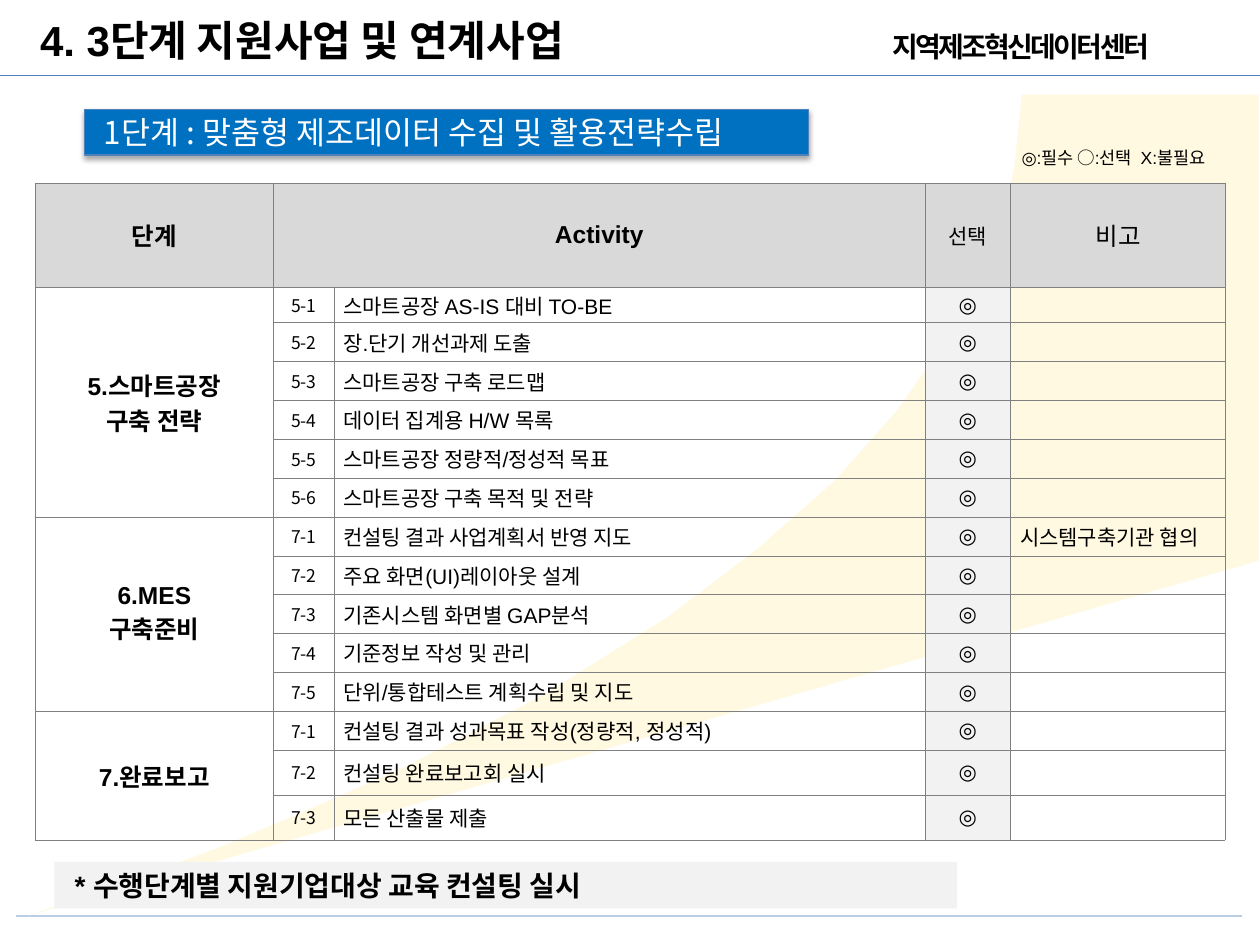
import pptx
import pptx.util
import pptx.dml.color
import pptx.enum.shapes
import pptx.enum.text
import pptx.oxml
import pptx.oxml.ns

Pt = pptx.util.Pt
RGB = pptx.dml.color.RGBColor
ALIGN = pptx.enum.text.PP_ALIGN
MIDDLE = pptx.enum.text.MSO_ANCHOR.MIDDLE

BLACK = RGB(0x00, 0x00, 0x00)
WHITE = RGB(0xFF, 0xFF, 0xFF)
CREAM = RGB(0xFF, 0xF9, 0xE1)
BLUE = RGB(0x00, 0x70, 0xC0)
BLUE_EDGE = RGB(0x4F, 0x81, 0xBD)
HEAD_RULE = RGB(0x4B, 0x7E, 0xBC)
FOOT_RULE = RGB(0xB9, 0xCD, 0xE5)
HEAD_FILL = RGB(0xD9, 0xD9, 0xD9)
PALE = RGB(0xF2, 0xF2, 0xF2)
GRID = RGB(0x80, 0x80, 0x80)
ARIAL, NOTO = "Arial", "Noto Sans CJK KR"

TITLE = "4. 3단계 지원사업 및 연계사업"
CENTER = "지역제조혁신데이터센터"
BANNER = "1단계 : 맞춤형 제조데이터 수집 및 활용전략수립"
FOOTNOTE = "* 수행단계별 지원기업대상 교육 컨설팅 실시"
LEGEND = [("◎:필수 ○:선택", 0), (" ", 2.8), ("X:불필요", 0)]

HEADERS = [(0, "단계", 14, True), (1, "Activity", 14, True),
           (3, "선택", 12, False), (4, "비고", 14, False)]
STAGES = [
    (["5.스마트공장", "구축 전략"], 5, [
        "스마트공장 AS-IS 대비 TO-BE", "장.단기 개선과제 도출",
        "스마트공장 구축 로드맵", "데이터 집계용 H/W 목록",
        "스마트공장 정량적/정성적 목표", "스마트공장 구축 목적 및 전략"]),
    (["6.MES", "구축준비"], 7, [
        "컨설팅 결과 사업계획서 반영 지도", "주요 화면(UI)레이아웃 설계",
        "기존시스템 화면별 GAP분석", "기준정보 작성 및 관리",
        "단위/통합테스트 계획수립 및 지도"]),
    (["7.완료보고"], 7, [
        "컨설팅 결과 성과목표 작성(정량적, 정성적)", "컨설팅 완료보고회 실시",
        "모든 산출물 제출"]),
]
REMARKS = {7: "시스템구축기관 협의"}
COLUMNS = [136, 35, 337.6, 48.4, 123]
ROWS = [60, 20] + [22.2] * 11 + [25.7] * 2

SWOOSH = [(584, 54), (719.3, 54), (719.3, 320.4), (15.8, 523.4), (75.6, 502.6),
          (124.6, 484.6), (180.7, 460.8), (234, 437), (312.5, 396), (382.3, 352.1),
          (433.4, 313.2), (477.4, 274.3), (512.6, 234.7), (537.8, 198.7),
          (555.8, 167.8), (571.7, 129.6), (579.6, 96.5)]


def element(parent, tag, **attrs):
    e = pptx.oxml.ns.qn(tag)
    child = parent.makeelement(e, {k: str(v) for k, v in attrs.items()})
    parent.append(child)
    return child


def add_run(p, text, size, font=ARIAL, bold=False, color=BLACK, spacing=0):
    r = p.add_run()
    r.text = text
    r.font.size = Pt(size)
    r.font.bold = bold
    r.font.color.rgb = color
    r.font.name = font
    rpr = r.font._element
    element(rpr, "a:ea", typeface=NOTO)
    if spacing:
        rpr.set("spc", str(round(spacing * 100)))


def prepare_frame(sp, inset=7.2, wrap=True):
    tf = sp.text_frame
    tf.word_wrap = wrap
    tf.vertical_anchor = MIDDLE
    tf.margin_left, tf.margin_right = Pt(inset), Pt(7.2)
    tf.margin_top = tf.margin_bottom = 0
    p = tf.paragraphs[0]
    p.alignment = ALIGN.LEFT
    return p


def add_box(s, box, inset=7.2, wrap=True):
    return prepare_frame(s.shapes.add_textbox(*map(Pt, box)), inset, wrap)


def add_bar(s, box, fill, inset):
    sp = s.shapes.add_shape(pptx.enum.shapes.MSO_SHAPE.RECTANGLE, *map(Pt, box))
    sp.shadow.inherit = False
    sp.fill.solid()
    sp.fill.fore_color.rgb = fill
    sp.line.fill.background()
    return sp, prepare_frame(sp, inset)


def add_rule(s, x1, x2, y, color, width):
    c = s.shapes.add_connector(pptx.enum.shapes.MSO_CONNECTOR.STRAIGHT,
                               Pt(x1), Pt(y), Pt(x2), Pt(y))
    c.line.color.rgb = color
    c.line.width = Pt(width)
    element(c._element.spPr, "a:effectLst")


def style_cell(cell, fill, left, right):
    cell.vertical_anchor = MIDDLE
    cell.margin_left, cell.margin_right = Pt(left), Pt(right)
    cell.margin_top = cell.margin_bottom = 0
    tcpr = cell._tc.get_or_add_tcPr()
    for side in ("L", "R", "T", "B"):
        ln = element(tcpr, "a:ln" + side, w=Pt(0.25))
        element(element(ln, "a:solidFill"), "a:srgbClr", val=GRID)
    if fill is None:
        cell.fill.background()
    else:
        cell.fill.solid()
        cell.fill.fore_color.rgb = fill


def fill_cell(cell, lines, size, font=ARIAL, bold=False, align=ALIGN.CENTER):
    tf = cell.text_frame
    for i, text in enumerate(lines):
        p = tf.add_paragraph() if i else tf.paragraphs[0]
        p.alignment = align
        add_run(p, text, size, font, bold)


def add_activity_table(s):
    table = s.shapes.add_table(len(ROWS), len(COLUMNS), Pt(20.2), Pt(104.4),
                               Pt(sum(COLUMNS)), Pt(sum(ROWS))).table
    table.first_row = table.horz_banding = False
    for col, width in zip(table.columns, COLUMNS):
        col.width = Pt(width)
    for row, height in zip(table.rows, ROWS):
        row.height = Pt(height)
    for r in range(len(ROWS)):
        for c in range(len(COLUMNS)):
            fill = HEAD_FILL if r == 0 else PALE if c == 3 else None
            left, right = {3: (2.9, 2.9), 4: (5.8, 0 if r else 5)}.get(c, (5, 5))
            style_cell(table.cell(r, c), fill, left, right)
    table.cell(0, 1).merge(table.cell(0, 2))
    for c, text, size, bold in HEADERS:
        fill_cell(table.cell(0, c), [text], size, bold=bold)
    r = 1
    for stage, prefix, activities in STAGES:
        table.cell(r, 0).merge(table.cell(r + len(activities) - 1, 0))
        fill_cell(table.cell(r, 0), stage, 14, bold=True)
        for n, activity in enumerate(activities, 1):
            fill_cell(table.cell(r, 1), [f"{prefix}-{n}"], 10, NOTO)
            fill_cell(table.cell(r, 2), [activity], 12, align=ALIGN.LEFT)
            fill_cell(table.cell(r, 3), ["◎"], 12)
            if r in REMARKS:
                fill_cell(table.cell(r, 4), [REMARKS[r]], 12, align=ALIGN.LEFT)
            r += 1
    for cell in table.iter_cells():
        if not cell.text_frame.text:
            element(cell.text_frame.paragraphs[0]._p, "a:endParaRPr", sz=1000)


def main():
    prs = pptx.Presentation()
    prs.slide_width, prs.slide_height = Pt(720), Pt(540)
    s = prs.slides.add_slide(prs.slide_layouts[6])

    add_rule(s, 0, 720, 43.2, HEAD_RULE, 0.75)
    add_rule(s, 9.4, 710, 523.4, FOOT_RULE, 1)
    add_run(add_box(s, (503, 14.4, 210, 23.8)), CENTER, 16, NOTO, True, spacing=-1.5)

    points = [(Pt(x), Pt(y)) for x, y in SWOOSH]
    builder = s.shapes.build_freeform(*points[0])
    builder.add_line_segments(points[1:], close=True)
    swoosh = builder.convert_to_shape()
    swoosh.shadow.inherit = False
    swoosh.fill.solid()
    swoosh.fill.fore_color.rgb = CREAM
    swoosh.line.fill.background()

    add_run(add_box(s, (15.8, 5, 389.5, 36)), TITLE, 24, bold=True)

    banner, p = add_bar(s, (48.2, 62.6, 414, 26), BLUE, 11.2)
    banner.line.color.rgb = BLUE_EDGE
    banner.line.width = Pt(0.75)
    effects = banner._element.spPr.find(pptx.oxml.ns.qn("a:effectLst"))
    shadow = element(effects, "a:outerShdw", blurRad=Pt(3.1), dist=Pt(1.8),
                     dir=5400000, rotWithShape=0)
    element(element(shadow, "a:srgbClr", val=BLACK), "a:alpha", val=35000)
    add_run(p, BANNER, 18, NOTO, color=WHITE)

    _, p = add_bar(s, (31, 492.5, 516, 26.6), PALE, 11.6)
    add_run(p, FOOTNOTE, 16, bold=True)

    add_activity_table(s)

    p = add_box(s, (576.7, 80.6, 132.5, 19.4), wrap=False)
    for text, spacing in LEGEND:
        add_run(p, text, 10, spacing=spacing)

    prs.save("out.pptx")


if __name__ == "__main__":
    main()
